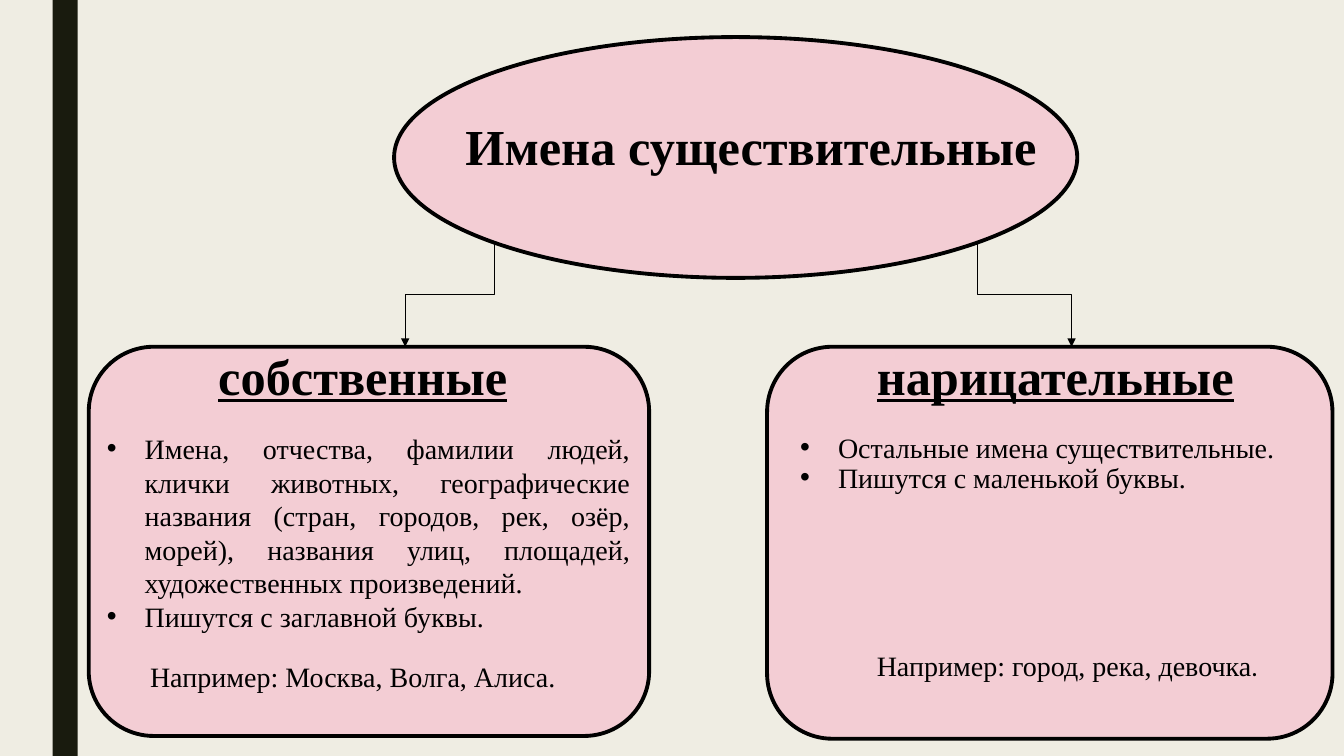
from pptx import Presentation
from pptx.dml.color import RGBColor
from pptx.enum.shapes import MSO_CONNECTOR, MSO_SHAPE
from pptx.enum.text import PP_ALIGN
from pptx.oxml.ns import qn
from pptx.util import Pt
from lxml.etree import SubElement

CREAM = RGBColor(0xEF, 0xED, 0xE3)
DARK = RGBColor(0x19, 0x1B, 0x0E)
PINK = RGBColor(0xF3, 0xCD, 0xD4)
BLACK = RGBColor(0, 0, 0)

BODY = {"name": "Times New Roman", "size": Pt(20)}
HEAD = {"name": "Times New Roman", "size": Pt(36), "bold": True}
UNDER = {**HEAD, "underline": True}
STOP = {"name": "Lato", "size": Pt(18)}


def add_form(slide, kind, box, fill, width=None):
    """Draw a filled preset shape, outlined when a width is given."""
    form = slide.shapes.add_shape(kind, *map(Pt, box))
    form.shadow.inherit = False
    form.fill.solid()
    form.fill.fore_color.rgb = fill
    if width:
        form.line.color.rgb = BLACK
        form.line.width = Pt(width)
    else:
        form.line.fill.background()


def add_text(slide, box, paras, align=PP_ALIGN.LEFT, pitch=None):
    """Write paragraphs of styled runs; a line pitch makes them a bullet list."""
    frame = slide.shapes.add_textbox(*map(Pt, box)).text_frame
    frame.word_wrap = True
    for i, runs in enumerate(paras):
        para = frame.add_paragraph() if i else frame.paragraphs[0]
        para.alignment = align
        if pitch:
            para.line_spacing = Pt(pitch)
            props = para._p.get_or_add_pPr()
            props.set("marL", str(Pt(27)))
            props.set("indent", str(-Pt(27)))
            SubElement(props, qn("a:buFont")).set("typeface", "Arial")
            SubElement(props, qn("a:buChar")).set("char", "•")
        for words, style in runs:
            run = para.add_run()
            run.text = words
            run.font.color.rgb = BLACK
            for key, value in style.items():
                setattr(run.font, key, value)


def add_topic(slide, box):
    """Draw the oval with the main topic."""
    left, top, width, height = box
    add_form(slide, MSO_SHAPE.OVAL, box, PINK, 2.75)
    add_text(slide, (left + 15, top + 52, width - 8, 73),
             [[("Имена существительные", HEAD)]], PP_ALIGN.CENTER)


def add_panel(slide, box, head, rules, note):
    """Draw a rounded panel with its heading, bullet list and example."""
    left, top, width, height = box
    add_form(slide, MSO_SHAPE.ROUNDED_RECTANGLE, box, PINK, 2.75)
    for part in (head, rules, note):
        x, y, w, h = part["box"]
        add_text(slide, (left + x, top + y, w, h), part["paras"],
                 part.get("align", PP_ALIGN.LEFT), part.get("pitch"))


def add_arrow(slide, start, end):
    """Draw an elbow arrow that leaves and arrives vertically."""
    (x1, y1), (x2, y2) = start, end
    mid_x, mid_y = (x1 + x2) / 2, (y1 + y2) / 2
    side = 1 if x2 > x1 else -1
    reach, half = side * (y2 - y1) / 2, abs(x2 - x1) / 2
    ends = (mid_x + reach, mid_y - half, mid_x - reach, mid_y + half)
    arrow = slide.shapes.add_connector(MSO_CONNECTOR.ELBOW, *map(Pt, ends))
    arrow.line.color.rgb = BLACK
    arrow.line.width = Pt(0.5)
    props = arrow._element.spPr
    turn = 270 if side > 0 else 90
    props.find(qn("a:xfrm")).set("rot", str(turn * 60000))
    SubElement(props.find(qn("a:ln")), qn("a:tailEnd")).set("type", "triangle")
    SubElement(props, qn("a:effectLst"))


def main():
    """Build the slide and save it."""
    deck = Presentation()
    deck.slide_width, deck.slide_height = Pt(960), Pt(540)
    slide = deck.slides.add_slide(deck.slide_layouts[6])
    slide.background.fill.solid()
    slide.background.fill.fore_color.rgb = CREAM
    add_form(slide, MSO_SHAPE.RECTANGLE, (37.5, 0, 18, 540), DARK)
    add_topic(slide, (281.5, 26.5, 488, 172))
    add_panel(
        slide, (63.4, 247.7, 400.3, 278),
        {"box": (84.2, -5, 223.2, 51), "align": PP_ALIGN.CENTER,
         "paras": [[("собственные", UNDER)]]},
        {"box": (5.8, 57, 388, 152), "align": PP_ALIGN.JUSTIFY, "pitch": 24,
         "paras": [[("Имена, отчества, фамилии людей, клички животных, "
                     "географические названия (стран, городов, рек, озёр, "
                     "морей), названия улиц, площадей, художественных "
                     "произведений.", BODY)],
                   [("Пишутся с заглавной буквы.", BODY)]]},
        {"box": (36.7, 219.6, 306.7, 31.5),
         "paras": [[("Например: Москва, Волга, Алиса.", BODY)]]})
    add_panel(
        slide, (547.9, 247.7, 403.9, 280),
        {"box": (71.3, -5, 272, 51),
         "paras": [[("нарицательные", UNDER)]]},
        {"box": (16.6, 58.5, 356.4, 52), "pitch": 21.6,
         "paras": [[("Остальные имена существительные.", BODY)],
                   [("Пишутся с маленькой буквы.", BODY)]]},
        {"box": (71.3, 211.7, 314.6, 31.5),
         "paras": [[("Например: город, река, девочка", BODY), (".", STOP)]]})
    add_arrow(slide, (698.4, 173.5), (765.4, 247.7))
    add_arrow(slide, (352.8, 173.5), (289.4, 247.7))
    deck.save("out.pptx")


if __name__ == "__main__":
    main()
